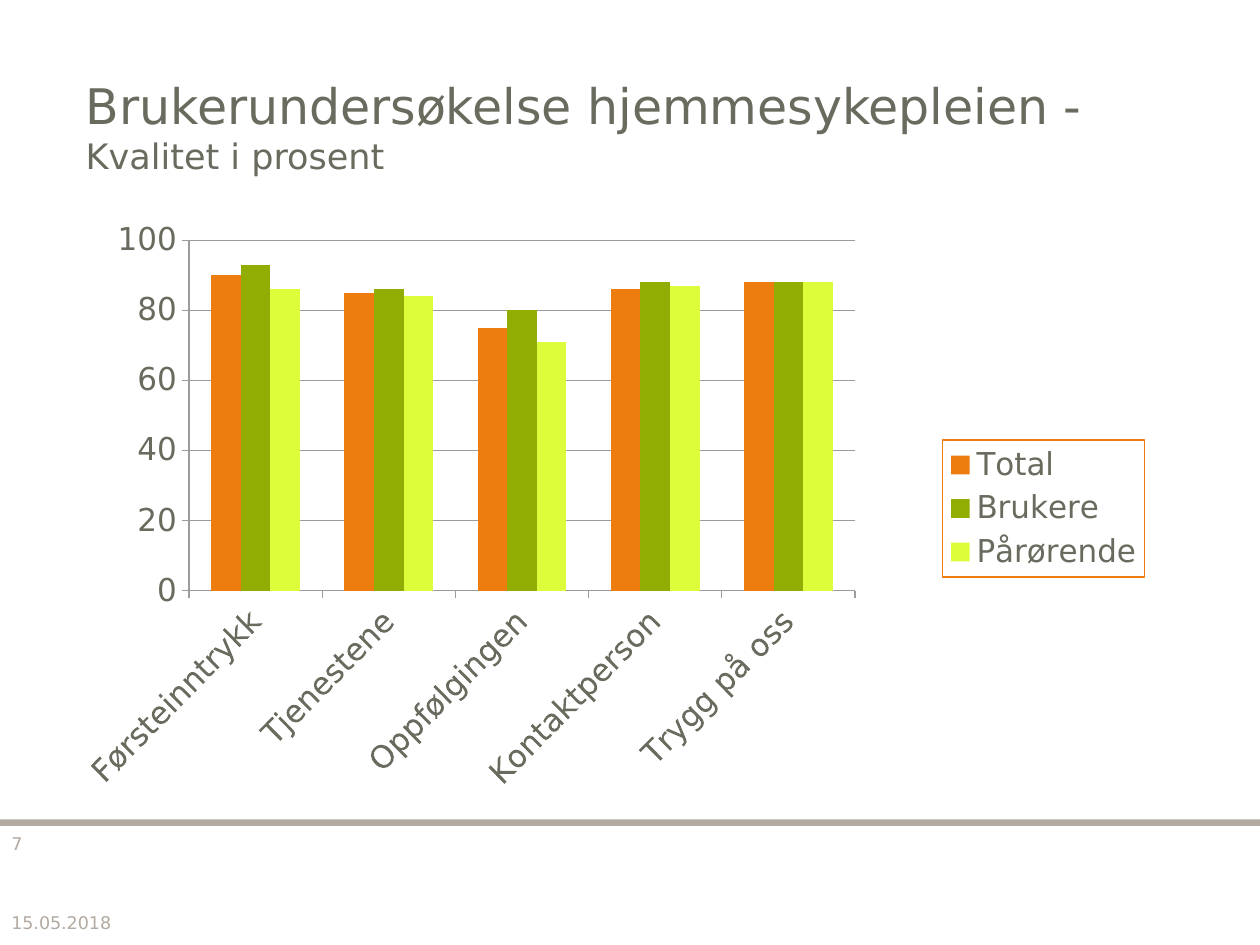
from dataclasses import dataclass

from lxml.etree import SubElement
from pptx import Presentation
from pptx.chart.data import CategoryChartData
from pptx.dml.color import RGBColor
from pptx.enum.chart import XL_CHART_TYPE, XL_LEGEND_POSITION, XL_TICK_MARK
from pptx.enum.shapes import MSO_SHAPE
from pptx.enum.text import MSO_ANCHOR, MSO_AUTO_SIZE, PP_ALIGN
from pptx.oxml import parse_xml
from pptx.oxml.ns import nsdecls, qn
from pptx.util import Inches, Pt


@dataclass(frozen=True)
class Theme:
    font: str = "DejaVu Sans"
    ink: str = "686B5D"
    muted: str = "B3AAA1"
    grid: str = "9B9B9B"
    paper: str = "FFFFFF"
    series: tuple = ("ED7D0F", "91AC03", "DDFC39")
    heading: int = 28
    subheading: int = 20
    label: int = 18
    footer: int = 10


def style_font(font, size, color, face):
    font.size = Pt(size)
    font.name = face
    font.color.rgb = RGBColor.from_string(color)


def write(paragraph, text, *, size, color, face):
    run = paragraph.add_run()
    run.text = text
    style_font(run.font, size, color, face)


def place_part(part, index, **shares):
    for old in part.findall(qn("c:layout")):
        part.remove(old)
    layout = parse_xml(f"<c:layout {nsdecls('c')}/>")
    manual = SubElement(layout, qn("c:manualLayout"))
    if part.tag == qn("c:plotArea"):
        SubElement(manual, qn("c:layoutTarget")).set("val", "inner")
    for mode in ("xMode", "yMode"):
        SubElement(manual, qn(f"c:{mode}")).set("val", "edge")
    for key, share in shares.items():
        SubElement(manual, qn(f"c:{key}")).set("val", str(share))
    part.insert(index, layout)


class SlideBuilder:
    def __init__(self, deck, theme):
        self.deck = deck
        self.theme = theme
        self.slide = deck.slides.add_slide(deck.slide_layouts[5])
        backdrop = self.slide.background.fill
        backdrop.solid()
        backdrop.fore_color.rgb = RGBColor.from_string(theme.paper)

    def area(self, left, top, width, height):
        across, down = self.deck.slide_width, self.deck.slide_height
        return (int(left * across), int(top * down),
                int(width * across), int(height * down))

    def frame(self, holder, anchor):
        frame = holder.text_frame
        frame.word_wrap = True
        frame.auto_size = MSO_AUTO_SIZE.NONE
        frame.vertical_anchor = anchor
        frame.margin_left = frame.margin_right = Inches(0.09)
        frame.margin_top = frame.margin_bottom = Inches(0.04)
        frame.paragraphs[0].alignment = PP_ALIGN.LEFT
        return frame.paragraphs[0]

    def rule(self, *shares):
        band = self.slide.shapes.add_shape(MSO_SHAPE.RECTANGLE, *self.area(*shares))
        band.shadow.inherit = False
        band.fill.solid()
        band.fill.fore_color.rgb = RGBColor.from_string(self.theme.muted)
        band.line.fill.background()

    def title(self, heading, subheading, *shares):
        holder = self.slide.shapes.title
        holder.left, holder.top, holder.width, holder.height = self.area(*shares)
        paragraph = self.frame(holder, MSO_ANCHOR.BOTTOM)
        theme = self.theme
        for text, size in ((heading, theme.heading), (subheading, theme.subheading)):
            write(paragraph, text, size=size, color=theme.ink, face=theme.font)

    def footer(self, text, *shares):
        holder = self.slide.shapes.add_textbox(*self.area(*shares))
        paragraph = self.frame(holder, MSO_ANCHOR.TOP)
        write(paragraph, text, size=self.theme.footer,
              color=self.theme.muted, face=self.theme.font)

    def columns(self, categories, ratings, *shares):
        theme = self.theme
        table = CategoryChartData()
        table.categories = categories
        for name, values in ratings.items():
            table.add_series(name, values)
        chart = self.slide.shapes.add_chart(
            XL_CHART_TYPE.COLUMN_CLUSTERED, *self.area(*shares), table).chart
        chart.has_title = False
        style_font(chart.font, theme.label, theme.ink, theme.font)
        columns = chart.plots[0]
        columns.gap_width = 150
        columns.overlap = 0
        columns.vary_by_categories = False
        for series, color in zip(columns.series, theme.series):
            series.format.fill.solid()
            series.format.fill.fore_color.rgb = RGBColor.from_string(color)
        place_part(chart.plots[0]._element.getparent(), 0,
                   x=0.083, y=0.044, w=0.632, h=0.595)
        self.axes(chart)
        self.legend(chart)

    def axes(self, chart):
        theme = self.theme
        scale, names = chart.value_axis, chart.category_axis
        scale.minimum_scale, scale.maximum_scale, scale.major_unit = 0, 100, 20
        scale.has_major_gridlines = True
        for line in (scale.format.line, names.format.line,
                     scale.major_gridlines.format.line):
            line.color.rgb = RGBColor.from_string(theme.grid)
            line.width = Pt(0.75)
        for axis in (scale, names):
            axis.major_tick_mark = XL_TICK_MARK.OUTSIDE
            axis.minor_tick_mark = XL_TICK_MARK.NONE
            style_font(axis.tick_labels.font, theme.label, theme.ink, theme.font)
        slant = names._element.find(qn("c:txPr")).find(qn("a:bodyPr"))
        slant.set("rot", "-2700000")
        slant.set("vert", "horz")

    def legend(self, chart):
        theme = self.theme
        chart.has_legend = True
        legend = chart.legend
        legend.position = XL_LEGEND_POSITION.RIGHT
        legend.include_in_layout = False
        style_font(legend.font, theme.label, theme.ink, theme.font)
        key = legend._element
        place_part(key, 1, x=0.798, y=0.383, w=0.192, h=0.233)
        key.find(qn("c:overlay")).addnext(parse_xml(
            f'<c:spPr {nsdecls("c", "a")}><a:noFill/><a:ln w="9525"><a:solidFill>'
            f'<a:srgbClr val="{theme.series[0]}"/></a:solidFill></a:ln></c:spPr>'))


def main():
    deck = Presentation()
    deck.slide_width, deck.slide_height = Inches(10), Inches(7.5)
    survey = SlideBuilder(deck, Theme())
    survey.rule(0, 0.867, 1, 0.007)
    survey.title("Brukerundersøkelse hjemmesykepleien - ", "Kvalitet i prosent",
                 0.059, 0.059, 0.85, 0.133)
    survey.footer("15.05.2018", 0, 0.96, 0.206, 0.037)
    survey.footer("7", 0, 0.876, 0.067, 0.037)
    survey.columns(
        ("Førsteinntrykk", "Tjenestene", "Oppfølgingen", "Kontaktperson", "Trygg på oss"),
        {"Total": (90, 85, 75, 86, 88),
         "Brukere": (93, 86, 80, 88, 88),
         "Pårørende": (86, 84, 71, 87, 88)},
        0.067, 0.227, 0.85, 0.623)
    deck.save("out.pptx")


if __name__ == "__main__":
    main()
